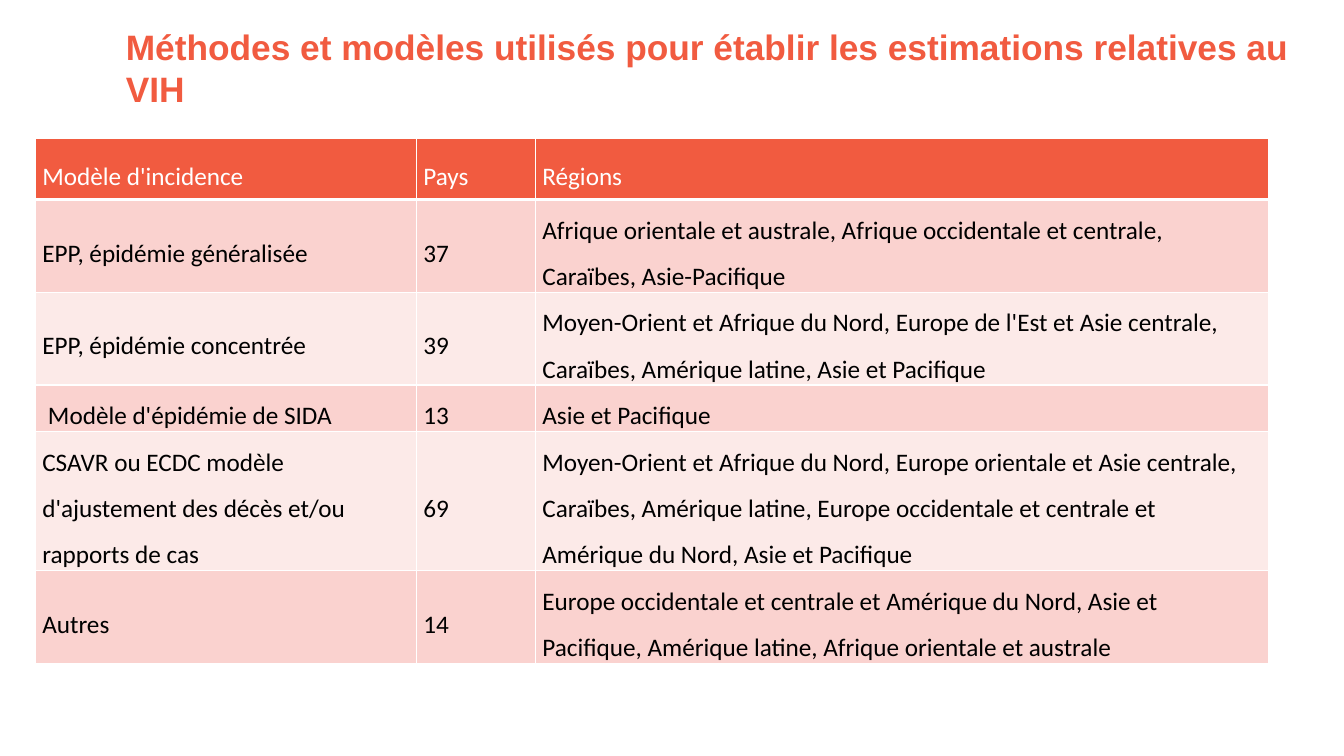
import pptx
import pptx.dml.color
import pptx.enum.text
import pptx.oxml
import pptx.oxml.ns
import pptx.util

Inches = pptx.util.Inches
Pt = pptx.util.Pt

COLORS = {
    "accent": "F15B40",
    "band_dark": "FAD2CF",
    "band_light": "FCEAE8",
    "white": "FFFFFF",
    "black": "000000",
}
COLUMN_WIDTHS = [3.78, 1.18, 7.27]
HEADER_HEIGHT = 0.61
LINE_HEIGHT = 0.46
LINES_PER_ROW = [2, 2, 1, 3, 2]
ROWS = [
    ("Modèle d'incidence", "Pays", "Régions"),
    ("EPP, épidémie généralisée", "37",
     "Afrique orientale et australe, Afrique occidentale et centrale, Caraïbes, Asie-Pacifique"),
    ("EPP, épidémie concentrée", "39",
     "Moyen-Orient et Afrique du Nord, Europe de l'Est et Asie centrale, "
     "Caraïbes, Amérique latine, Asie et Pacifique"),
    (" Modèle d'épidémie de SIDA", "13", "Asie et Pacifique"),
    ("CSAVR ou ECDC modèle d'ajustement des décès et/ou rapports de cas", "69",
     "Moyen-Orient et Afrique du Nord, Europe orientale et Asie centrale, Caraïbes, "
     "Amérique latine, Europe occidentale et centrale et Amérique du Nord, Asie et Pacifique"),
    ("Autres", "14",
     "Europe occidentale et centrale et Amérique du Nord, Asie et Pacifique, "
     "Amérique latine, Afrique orientale et australe"),
]


class SlideBuilder:
    """Draws styled elements on one slide."""

    def __init__(self, slide):
        self.slide = slide
        self.middle = pptx.enum.text.MSO_ANCHOR.MIDDLE

    def color(self, name):
        return pptx.dml.color.RGBColor.from_string(COLORS[name])

    def run(self, p, text, font, size, color, bold=False):
        r = p.add_run()
        r.text = text
        r.font.name = font
        r.font.size = Pt(size)
        r.font.bold = bold
        r.font.color.rgb = self.color(color)

    def title(self, text, left, top, width, height):
        sp = self.slide.shapes.add_textbox(
            Inches(left), Inches(top), Inches(width), Inches(height))
        tf = sp.text_frame
        tf.word_wrap = True
        tf.vertical_anchor = self.middle
        self.run(tf.paragraphs[0], text, "Arial", 25.2, "accent", bold=True)

    def borders(self, cell, bottom):
        tcPr = cell._tc.get_or_add_tcPr()
        for side, width in (("L", 1), ("R", 1), ("T", 1), ("B", bottom)):
            tcPr.append(pptx.oxml.parse_xml(
                f'<a:ln{side} {pptx.oxml.ns.nsdecls("a")} w="{Pt(width)}"><a:solidFill>'
                f'<a:srgbClr val="{COLORS["white"]}"/></a:solidFill></a:ln{side}>'))

    def cell(self, cell, text, fill, color, bottom):
        self.borders(cell, bottom)
        cell.fill.solid()
        cell.fill.fore_color.rgb = self.color(fill)
        cell.vertical_anchor = self.middle
        cell.margin_left = cell.margin_right = Inches(0.07)
        cell.margin_top = cell.margin_bottom = 0
        p = cell.text_frame.paragraphs[0]
        p.line_spacing = 1.5
        p.space_after = Pt(4)
        self.run(p, text, "Calibri", 18, color)

    def table(self, rows, left, top, widths, heights):
        table = self.slide.shapes.add_table(
            len(rows), len(widths), Inches(left), Inches(top),
            Inches(sum(widths)), Inches(sum(heights))).table
        table.horz_banding = False
        for column, width in zip(table.columns, widths):
            column.width = Inches(width)
        for i, (row, height) in enumerate(zip(rows, heights)):
            table.rows[i].height = Inches(height)
            fill = "accent" if i == 0 else "band_dark" if i % 2 else "band_light"
            color, bottom = ("white", 3) if i == 0 else ("black", 1)
            for j, text in enumerate(row):
                self.cell(table.cell(i, j), text, fill, color, bottom)


def main():
    prs = pptx.Presentation()
    prs.slide_width = Inches(13.33)
    prs.slide_height = Inches(7.5)
    s = SlideBuilder(prs.slides.add_slide(prs.slide_layouts[6]))
    s.title("Méthodes et modèles utilisés pour établir les estimations relatives au VIH",
            1.15, 0.27, 11.84, 0.8)
    heights = [HEADER_HEIGHT] + [n * LINE_HEIGHT for n in LINES_PER_ROW]
    s.table(ROWS, 0.35, 1.37, COLUMN_WIDTHS, heights)
    prs.save("out.pptx")


if __name__ == "__main__":
    main()
